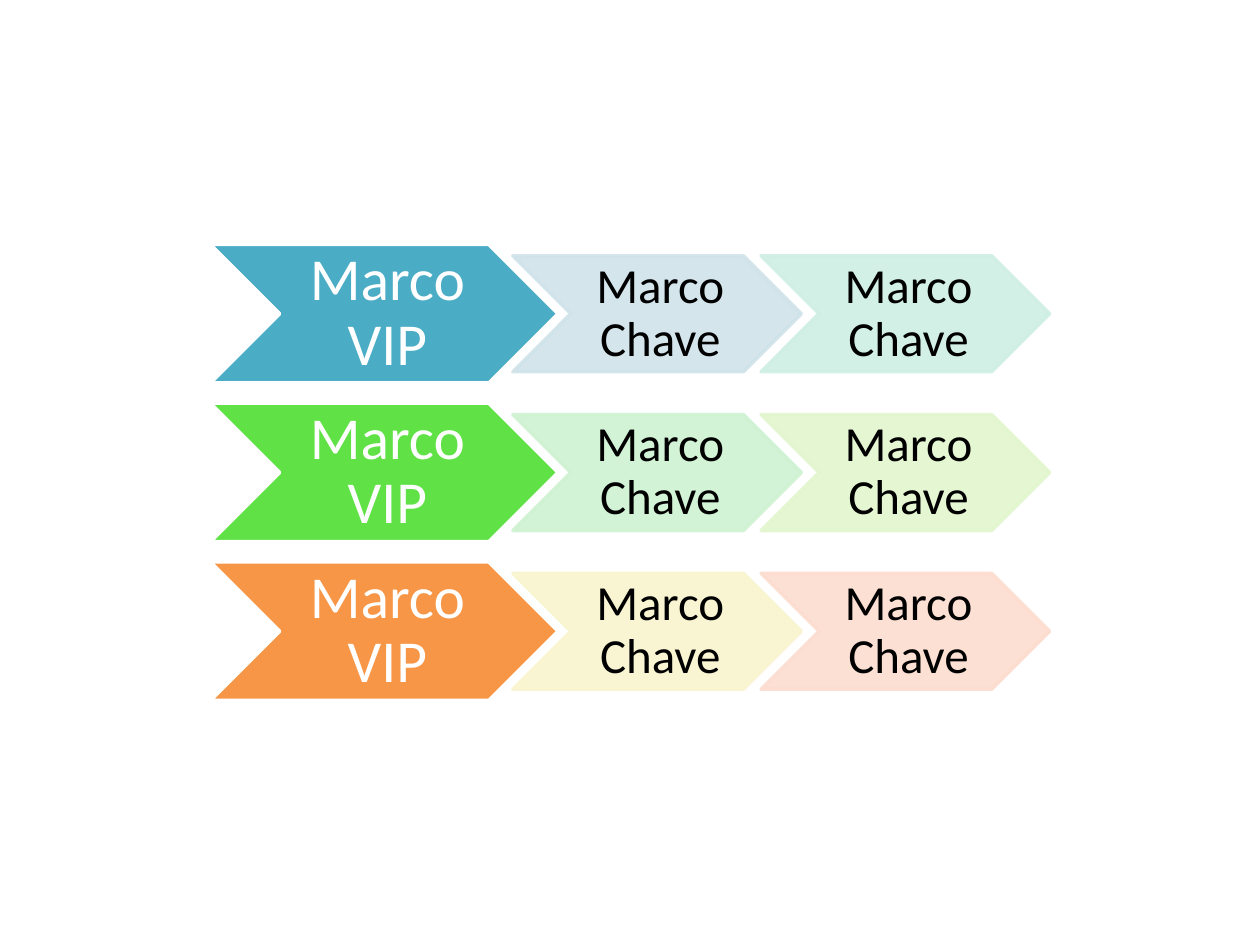
from lxml.etree import SubElement
from pptx import Presentation
from pptx.dml.color import RGBColor
from pptx.enum.shapes import MSO_SHAPE
from pptx.enum.text import MSO_ANCHOR, PP_ALIGN
from pptx.oxml.ns import qn
from pptx.util import Inches, Pt

COLORS = {
    "white": "FFFFFF", "black": "000000",
    "teal": "4BACC6", "pale blue": "D0E3EA", "pale teal": "CFEFE5",
    "green": "60E146", "pale green": "CFF2D2", "pale lime": "E2F6CE",
    "orange": "F79646", "pale yellow": "F9F5CF", "pale coral": "FCDDCF",
}
ROWS = [
    ("teal", "pale blue", "pale teal"),
    ("green", "pale green", "pale lime"),
    ("orange", "pale yellow", "pale coral"),
]
LEFT, TOP, ROW_STEP = 1.67, 1.94, 1.26
VIP_WIDTH, VIP_HEIGHT = 2.76, 1.1
KEY_LEFT, KEY_STEP = 4.07, 1.97
KEY_WIDTH, KEY_HEIGHT = 2.29, 0.92


def set_opacity(color_format, percent):
    for color in color_format._xFill.iter(qn("a:srgbClr")):
        SubElement(color, qn("a:alpha"), val=str(percent * 1000))


def add_milestone(slide, box, label, size, fill, line, ink):
    chevron = slide.shapes.add_shape(MSO_SHAPE.CHEVRON, *map(Inches, box))
    chevron.shadow.inherit = False
    chevron.fill.solid()
    chevron.fill.fore_color.rgb = RGBColor.from_string(COLORS[fill])
    chevron.line.color.rgb = RGBColor.from_string(COLORS[line])
    chevron.line.width = Pt(2)

    frame = chevron.text_frame
    frame.word_wrap = True
    frame.vertical_anchor = MSO_ANCHOR.MIDDLE
    frame.margin_left, frame.margin_right = Inches(0.05), 0
    frame.margin_top = frame.margin_bottom = Inches(0.02)
    paragraph = frame.paragraphs[0]
    paragraph.alignment = PP_ALIGN.CENTER
    paragraph.line_spacing = 0.9
    run = paragraph.add_run()
    run.text = label
    run.font.name = "Calibri"
    run.font.size = Pt(size)
    run.font.color.rgb = RGBColor.from_string(COLORS[ink])
    return chevron


presentation = Presentation()
presentation.slide_width, presentation.slide_height = Inches(10), Inches(7.5)
slide = presentation.slides.add_slide(presentation.slide_layouts[6])

for row, (vip_color, *key_colors) in enumerate(ROWS):
    top = TOP + row * ROW_STEP
    add_milestone(slide, (LEFT, top, VIP_WIDTH, VIP_HEIGHT),
                  "Marco VIP", 34, vip_color, "white", "white")
    key_top = top + (VIP_HEIGHT - KEY_HEIGHT) / 2
    for column, key_color in enumerate(key_colors):
        key_box = (KEY_LEFT + column * KEY_STEP, key_top, KEY_WIDTH, KEY_HEIGHT)
        key_milestone = add_milestone(slide, key_box, "Marco Chave", 28,
                                      key_color, key_color, "black")
        properties = key_milestone._element.spPr
        for color in properties.iter(qn("a:srgbClr")):
            SubElement(color, qn("a:alpha"), val="90000")

presentation.save("out.pptx")
